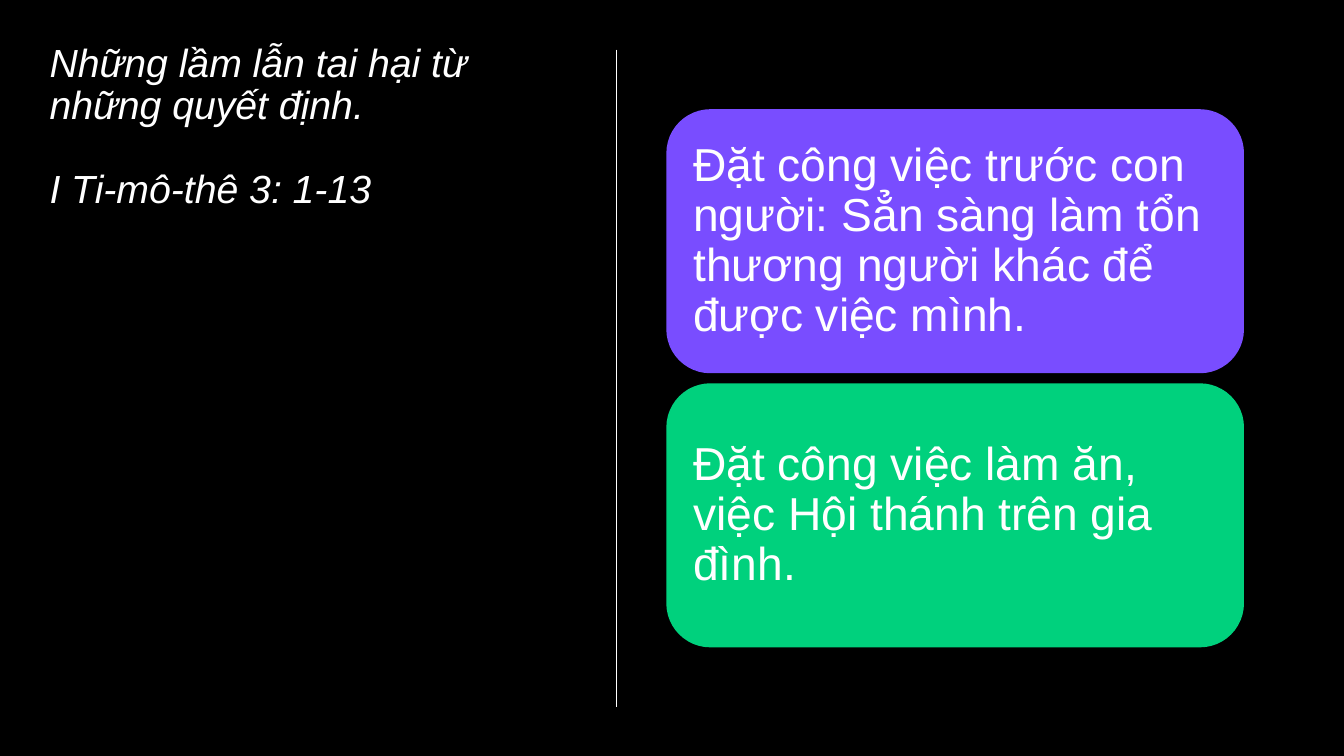
"""Build a slide with an italic title, a divider and two rounded cards."""
from dataclasses import dataclass

from lxml import etree
from pptx import Presentation
from pptx import util as u
from pptx.dml.color import RGBColor
from pptx.enum import shapes, text
from pptx.oxml.ns import qn

Pt = u.Pt


@dataclass(frozen=True)
class Theme:
    font: str = "Arial"
    background: str = "000000"
    ink: str = "FFFFFF"
    purple: str = "794DFF"
    green: str = "00D17D"
    title_size: float = 28
    card_size: float = 33
    line_spacing: float = 0.9


THEME = Theme()
TITLE = ["Những lầm lẫn tai hại từ những quyết định.", "I Ti-mô-thê 3: 1-13"]
CARDS = [
    ("Đặt công việc trước con người: Sẳn sàng làm tổn thương người khác "
     "để được việc mình.", THEME.purple),
    ("Đặt công việc làm ăn, việc Hội thánh trên gia đình.", THEME.green),
]
CARD_LEFT, CARD_TOP, CARD_WIDTH, CARD_HEIGHT, CARD_GAP = 476, 78, 412.6, 188.6, 7.2


def write(sp, lines, size, inset, anchor, gap=0, italic=False):
    tf = sp.text_frame
    tf.word_wrap = True
    tf.vertical_anchor = anchor
    tf.margin_left = tf.margin_top = tf.margin_right = tf.margin_bottom = Pt(inset)
    for i, line in enumerate(lines):
        p = tf.add_paragraph() if i else tf.paragraphs[0]
        p.alignment = text.PP_ALIGN.LEFT
        p.line_spacing = THEME.line_spacing
        p.space_before = Pt(gap if i else 0)
        r = p.add_run()
        r.text = line
        r.font.name = THEME.font
        r.font.size = Pt(size)
        r.font.italic = italic
        r.font.color.rgb = RGBColor.from_string(THEME.ink)


def add_title(s, lines):
    sp = s.shapes.add_textbox(Pt(35.4), Pt(31), Pt(369.4), Pt(469.4))
    write(sp, lines, THEME.title_size, 0, text.MSO_ANCHOR.TOP, gap=30, italic=True)


def add_divider(s, x, top, bottom):
    line = s.shapes.add_connector(
        shapes.MSO_CONNECTOR.STRAIGHT, Pt(x), Pt(top), Pt(x), Pt(bottom))
    line.line.color.rgb = RGBColor.from_string(THEME.ink)
    line.line.width = Pt(0.75)
    etree.SubElement(line._element.spPr, qn("a:effectLst"))


def add_card(s, top, words, color):
    sp = s.shapes.add_shape(
        shapes.MSO_SHAPE.ROUNDED_RECTANGLE,
        Pt(CARD_LEFT), Pt(top), Pt(CARD_WIDTH), Pt(CARD_HEIGHT))
    sp.shadow.inherit = False
    sp.fill.solid()
    sp.fill.fore_color.rgb = RGBColor.from_string(color)
    sp.line.fill.background()
    write(sp, [words], THEME.card_size, 10, text.MSO_ANCHOR.MIDDLE)


def main():
    prs = Presentation()
    prs.slide_width, prs.slide_height = Pt(960), Pt(540)
    s = prs.slides.add_slide(prs.slide_layouts[6])
    s.background.fill.solid()
    s.background.fill.fore_color.rgb = RGBColor.from_string(THEME.background)
    add_title(s, TITLE)
    add_divider(s, 440.4, 35.4, 505.2)
    for i, (words, color) in enumerate(CARDS):
        add_card(s, CARD_TOP + i * (CARD_HEIGHT + CARD_GAP), words, color)
    prs.save("out.pptx")


if __name__ == "__main__":
    main()
